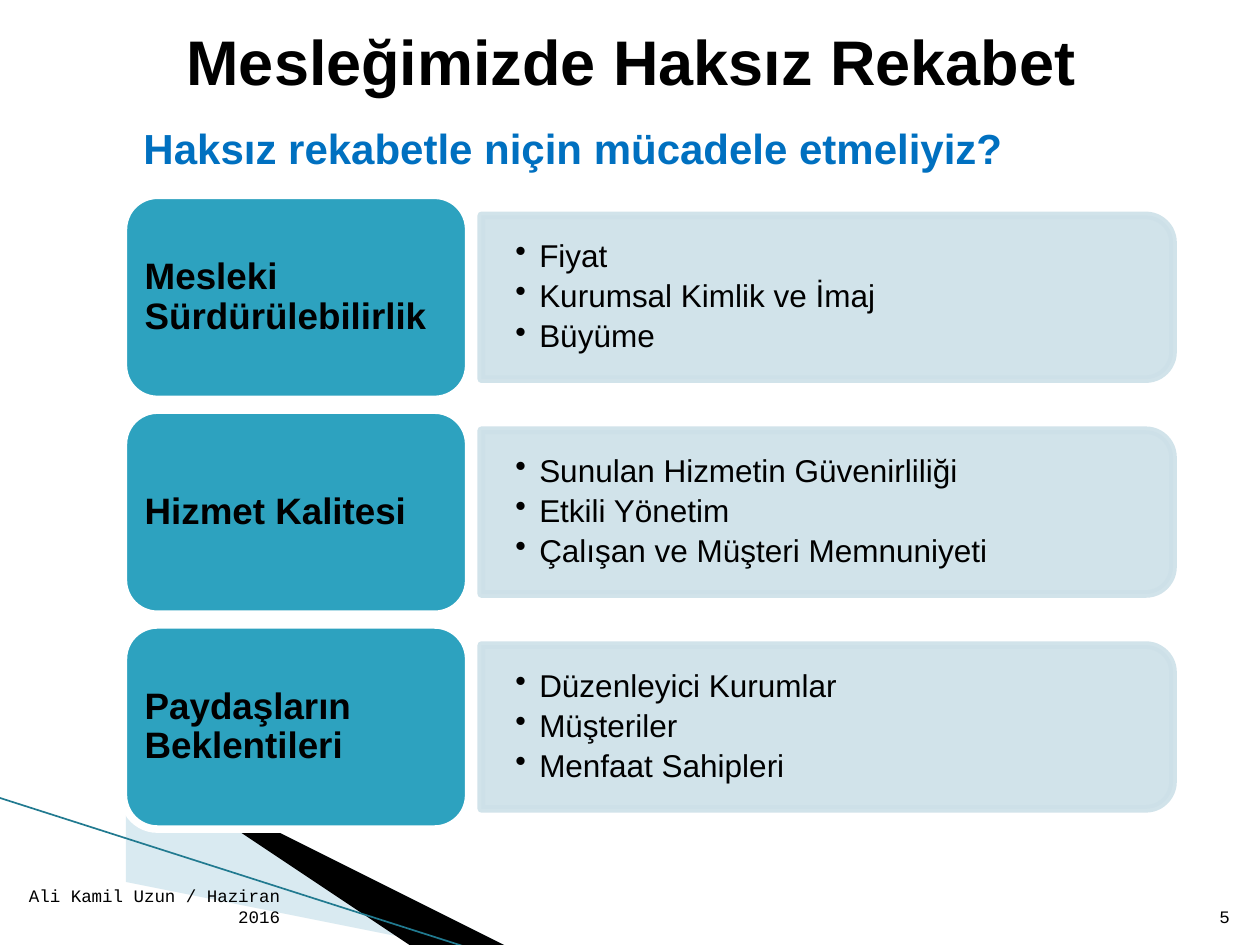
from lxml.etree import SubElement
from pptx import Presentation
from pptx.dml.color import RGBColor
from pptx.enum.shapes import MSO_CONNECTOR, MSO_SHAPE
from pptx.enum.text import MSO_ANCHOR as Anchor, PP_ALIGN as Align
from pptx.oxml.ns import qn
from pptx.util import Inches, Pt

BLACK = RGBColor(0x00, 0x00, 0x00)
WHITE = RGBColor(0xFF, 0xFF, 0xFF)
BLUE = RGBColor(0x00, 0x70, 0xC0)
TEAL = RGBColor(0x2D, 0xA2, 0xBF)
DARK_TEAL = RGBColor(0x21, 0x7A, 0x90)
PALE = RGBColor(0xCD, 0xE0, 0xE8)
WEDGE_BLUE = RGBColor(0xA0, 0xCB, 0xDC)

# Grid of the three rows, in inches
ROW_TOP, ROW_PITCH, ROW_HEIGHT = 1.55, 1.705, 1.62
LABEL_LEFT, LABEL_WIDTH = 0.98, 2.74
PANEL_LEFT, PANEL_WIDTH, PANEL_HEIGHT = 3.82, 5.49, 1.3

ROWS = [
    ("Mesleki Sürdürülebilirlik",
     ["Fiyat", "Kurumsal Kimlik ve İmaj", "Büyüme"]),
    ("Hizmet Kalitesi",
     ["Sunulan Hizmetin Güvenirliliği", "Etkili Yönetim",
      "Çalışan ve Müşteri Memnuniyeti"]),
    ("Paydaşların Beklentileri",
     ["Düzenleyici Kurumlar", "Müşteriler", "Menfaat Sahipleri"]),
]


def write(shape, text, size, color=BLACK, font="Arial", bold=False,
          align=Align.LEFT, anchor=Anchor.TOP, margins=(0.1, 0.05)):
    frame = shape.text_frame
    frame.text = text
    frame.word_wrap = True
    frame.vertical_anchor = anchor
    frame.margin_left = frame.margin_right = Inches(margins[0])
    frame.margin_top = frame.margin_bottom = Inches(margins[1])
    for paragraph in frame.paragraphs:
        paragraph.alignment = align
        for run in paragraph.runs:
            run.font.size, run.font.name = Pt(size), font
            run.font.bold, run.font.color.rgb = bold, color
    return frame


def set_opacity(fill, color, percent):
    fill.solid()
    fill.fore_color.rgb = color
    for solid in fill._xPr.iter(qn("a:srgbClr")):
        SubElement(solid, qn("a:alpha"), val=str(percent * 1000))


prs = Presentation()
prs.slide_width, prs.slide_height = Inches(10), Inches(7.5)
slide = prs.slides.add_slide(prs.slide_layouts[5])
shapes = slide.shapes

# Title and question
title = shapes.title
title.left, title.top = Inches(0.51), Inches(0.13)
title.width, title.height = Inches(9), Inches(0.86)
write(title, "Mesleğimizde Haksız Rekabet", 36, bold=True, align=Align.CENTER)
question = shapes.add_textbox(Inches(1.04), Inches(0.92), Inches(8.61), Inches(0.55))
write(question, "Haksız rekabetle niçin mücadele etmeliyiz?", 24, BLUE, bold=True)

# Corner wedges and their edge line
WEDGES = [
    (WEDGE_BLUE, 40, [(0.55, 6.51), (5.95, 7.51), (4.56, 7.51), (0.55, 6.5)]),
    (BLACK, 100, [(0.53, 6.49), (4.57, 7.51), (3.72, 7.52), (0.54, 6.5)]),
]
for color, opacity, points in WEDGES:
    outline = shapes.build_freeform(*points[0], scale=Inches(1))
    outline.add_line_segments(points[1:], close=True)
    wedge = outline.convert_to_shape()
    wedge.shadow.inherit = False
    set_opacity(wedge.fill, color, opacity)
    wedge.line.fill.background()

edge = shapes.add_connector(MSO_CONNECTOR.STRAIGHT, Inches(-0.01), Inches(6.33),
                            Inches(3.71), Inches(7.52))
edge.line.color.rgb, edge.line.width = DARK_TEAL, Pt(0.95)
SubElement(edge._element.spPr, qn("a:effectLst"))

# Footer and page number
for left, width, text in [(0, 2.32, "Ali Kamil Uzun / Haziran 2016"), (9.46, 0.4, "5")]:
    footer = shapes.add_textbox(Inches(left), Inches(7.01), Inches(width), Inches(0.4))
    write(footer, text, 10, font="Courier New", align=Align.RIGHT, anchor=Anchor.BOTTOM)

# Rows: a rounded panel with bullets beside its label
for row, (heading, reasons) in enumerate(ROWS):
    top = ROW_TOP + row * ROW_PITCH
    middle = top + ROW_HEIGHT / 2

    # The panel stands upright and is turned a quarter to the right
    panel = shapes.add_shape(
        MSO_SHAPE.ROUND_2_SAME_RECTANGLE,
        Inches(PANEL_LEFT + (PANEL_WIDTH - PANEL_HEIGHT) / 2),
        Inches(middle - PANEL_WIDTH / 2), Inches(PANEL_HEIGHT), Inches(PANEL_WIDTH))
    panel.rotation = 90
    panel.shadow.inherit = False
    panel.line.width = Pt(4.33)
    set_opacity(panel.fill, PALE, 90)
    set_opacity(panel.line.fill, PALE, 90)

    bullets = shapes.add_textbox(Inches(PANEL_LEFT), Inches(middle - 1.17 / 2),
                                 Inches(5.43), Inches(1.17))
    frame = write(bullets, "\n".join(reasons), 18, anchor=Anchor.MIDDLE,
                  margins=(0.27, 0.14))
    for paragraph in frame.paragraphs:
        paragraph.line_spacing, paragraph.space_after = 0.9, Pt(3.5)
        properties = paragraph._p.get_or_add_pPr()
        properties.set("marL", str(Inches(0.19)))
        properties.set("indent", str(Inches(-0.19)))
        SubElement(properties, qn("a:buChar"), char="•")

    label = shapes.add_shape(MSO_SHAPE.ROUNDED_RECTANGLE, Inches(LABEL_LEFT),
                             Inches(top), Inches(LABEL_WIDTH), Inches(ROW_HEIGHT))
    label.shadow.inherit = False
    label.fill.solid()
    label.fill.fore_color.rgb = TEAL
    label.line.color.rgb, label.line.width = WHITE, Pt(4.33)
    frame = write(label, heading, 21, bold=True, anchor=Anchor.MIDDLE,
                  margins=(0.09, 0.04))
    frame.paragraphs[0].line_spacing = 0.9

prs.save("out.pptx")
